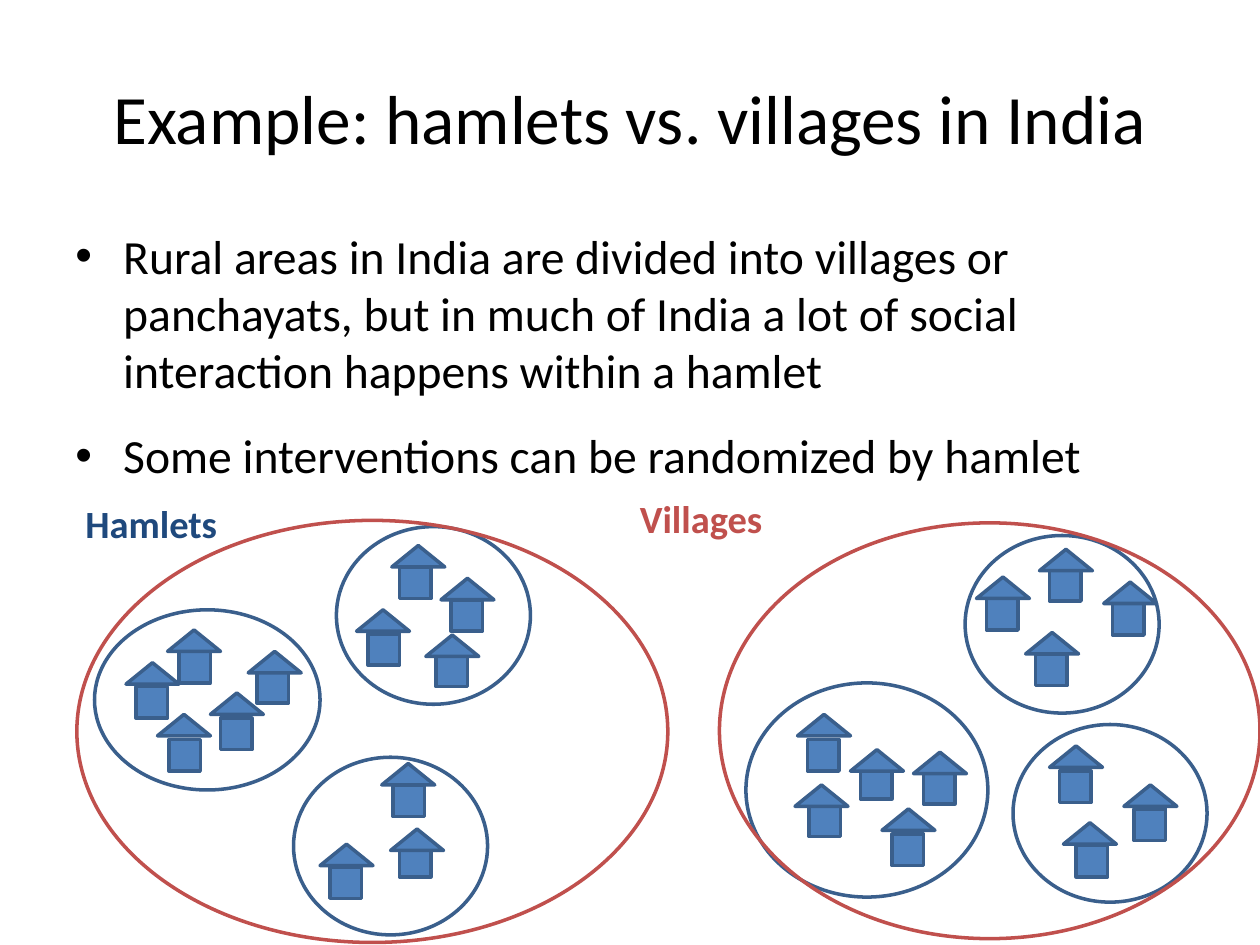
from pptx import Presentation
from pptx.dml.color import RGBColor
from pptx.enum import shapes, text
from pptx.oxml import parse_xml
from pptx.oxml.ns import nsdecls
from pptx.util import Inches, Pt

COLORS = {"ink": "000000", "house": "4F81BD", "outline": "3A5F8C",
          "hamlet": "1F497D", "village": "C0504D"}
FONT = "Calibri"
WALL = (0.25, 0.25)
ROOF = (0.42, 0.17)

VILLAGES = [(5.71, 4.15, 4.29, 3.3), (0.61, 4.13, 4.69, 3.35)]

# Each hamlet: its boundary (left, top, width, height) and its houses,
# given as (roof left, roof top, wall left, wall top).
HAMLETS = [
    ((0.75, 4.84, 1.79, 1.43),
     [(1.33, 5, 1.42, 5.17), (1, 5.26, 1.08, 5.45), (1.25, 5.67, 1.34, 5.87),
      (1.67, 5.5, 1.75, 5.7), (1.97, 5.17, 2.04, 5.33)]),
    ((2.67, 4.18, 1.54, 1.41),
     [(2.83, 4.84, 2.92, 5.03), (3.11, 4.33, 3.17, 4.5),
      (3.5, 4.59, 3.58, 4.76), (3.38, 5.04, 3.46, 5.2)]),
    ((8.04, 5.75, 1.54, 1.41),
     [(8.44, 6.53, 8.54, 6.71), (8.92, 6.23, 9, 6.42),
      (8.33, 5.92, 8.41, 6.12)]),
    ((2.33, 6.01, 1.54, 1.41),
     [(3.03, 6.06, 3.12, 6.23), (3.1, 6.58, 3.17, 6.71),
      (2.54, 6.7, 2.62, 6.88)]),
    ((5.92, 5.42, 1.92, 1.7),
     [(6.31, 6.23, 6.42, 6.39), (6.33, 5.67, 6.41, 5.87),
      (6.75, 5.95, 6.83, 6.09), (7.25, 5.97, 7.33, 6.13),
      (7, 6.42, 7.08, 6.62)]),
    ((7.66, 4.25, 1.54, 1.41),
     [(8.76, 4.62, 8.83, 4.79), (8.25, 4.36, 8.33, 4.52),
      (7.75, 4.58, 7.83, 4.75), (8.14, 5.02, 8.22, 5.19)]),
]


def color(name):
    return RGBColor.from_string(COLORS[name])


def add_bullet(para, indent):
    props = para._p.get_or_add_pPr()
    props.set("marL", str(Inches(indent)))
    props.set("indent", str(-Inches(indent)))
    props.append(parse_xml(f'<a:buFont {nsdecls("a")} typeface="Arial"/>'))
    props.append(parse_xml(f'<a:buChar {nsdecls("a")} char="•"/>'))


def add_text(page, bounds, *lines, size, ink="ink", bold=False, bullets=False,
             gap=0, align=text.PP_ALIGN.LEFT, anchor=text.MSO_ANCHOR.TOP):
    """Add a text box with one paragraph per line, gap points apart."""
    box = page.shapes.add_textbox(*map(Inches, bounds))
    frame = box.text_frame
    frame.word_wrap = True
    frame.vertical_anchor = anchor
    for index, line in enumerate(lines):
        para = frame.add_paragraph() if index else frame.paragraphs[0]
        para.alignment = align
        para.space_before = Pt(gap if index else 0)
        if bullets:
            add_bullet(para, 0.38)
        span = para.add_run()
        span.text = line
        span.font.name = FONT
        span.font.size = Pt(size)
        span.font.bold = bold
        span.font.color.rgb = color(ink)


def add_outlined(page, kind, bounds, line="outline", fill=None):
    shape = page.shapes.add_shape(kind, *map(Inches, bounds))
    shape.shadow.inherit = False
    shape.line.color.rgb = color(line)
    shape.line.width = Pt(2)
    if fill:
        shape.fill.solid()
        shape.fill.fore_color.rgb = color(fill)
    else:
        shape.fill.background()


def add_house(page, roof_left, roof_top, wall_left, wall_top):
    kinds = shapes.MSO_SHAPE
    add_outlined(page, kinds.RECTANGLE, (wall_left, wall_top, *WALL),
                 fill="house")
    add_outlined(page, kinds.ISOSCELES_TRIANGLE, (roof_left, roof_top, *ROOF),
                 fill="house")


def add_hamlet(page, boundary, houses):
    for house in houses:
        add_house(page, *house)
    add_outlined(page, shapes.MSO_SHAPE.OVAL, boundary)


def main():
    deck = Presentation()
    deck.slide_width, deck.slide_height = Inches(10), Inches(7.5)
    page = deck.slides.add_slide(deck.slide_layouts[6])

    add_text(page, (0.5, 0.3, 9, 1.25),
             "Example: hamlets vs. villages in India", size=39.6,
             align=text.PP_ALIGN.CENTER, anchor=text.MSO_ANCHOR.MIDDLE)
    add_text(page, (0.5, 1.75, 9.03, 1.83),
             "Rural areas in India are divided into villages or panchayats, "
             "but in much of India a lot of social interaction happens "
             "within a hamlet",
             "Some interventions can be randomized by hamlet",
             size=27.2, bullets=True, gap=16)

    for boundary, houses in HAMLETS:
        add_hamlet(page, boundary, houses)
    for boundary in VILLAGES:
        add_outlined(page, shapes.MSO_SHAPE.OVAL, boundary, line="village")

    add_text(page, (0.58, 3.92, 1.74, 0.47), "Hamlets", size=22,
             ink="hamlet", bold=True)
    add_text(page, (4.98, 3.88, 1.74, 0.47), "Villages", size=22,
             ink="village", bold=True)
    deck.save("out.pptx")


if __name__ == "__main__":
    main()
